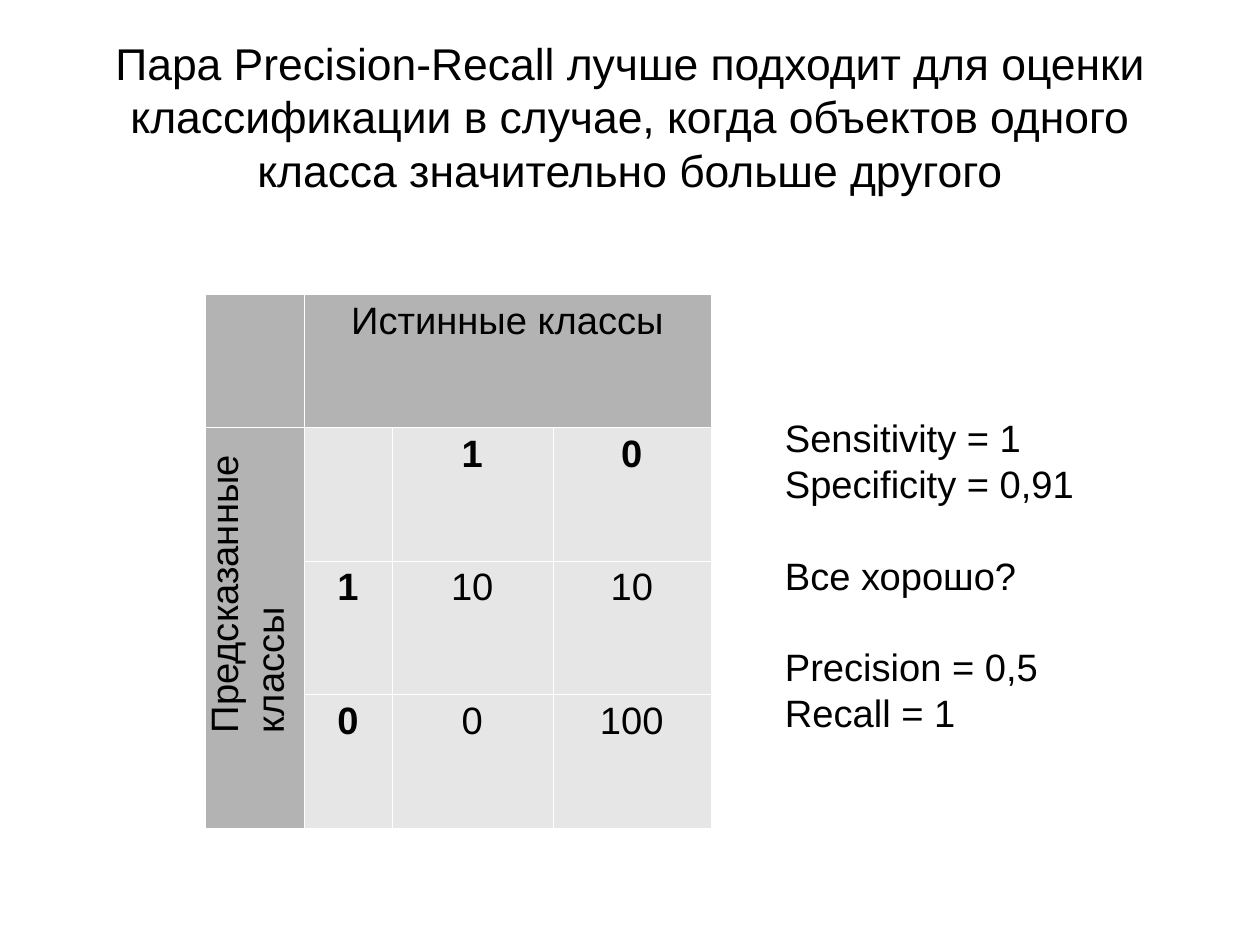
from lxml.etree import SubElement
from pptx import Presentation
from pptx.dml.color import RGBColor
from pptx.enum.text import MSO_ANCHOR, PP_ALIGN
from pptx.oxml.ns import qn
from pptx.util import Pt

INK, WHITE, DARK, LIGHT = "000000", "FFFFFF", "B3B3B3", "E6E6E6"


def color(code):
    return RGBColor.from_string(code)


def write(frame, lines, size=24, bold=False, align=PP_ALIGN.LEFT, gaps=()):
    for i, line in enumerate(lines):
        par = frame.paragraphs[0] if i == 0 else frame.add_paragraph()
        par.alignment = align
        if i in gaps:
            par.space_before = Pt(28.8)
        run = par.add_run()
        run.text = line
        run.font.name = "Arial"
        run.font.size = Pt(size)
        run.font.bold = bold
        run.font.color.rgb = color(INK)


def add_box(slide, box, lines, inset=True, anchor=MSO_ANCHOR.TOP, turn=0, **style):
    shape = slide.shapes.add_textbox(*map(Pt, box))
    shape.rotation = turn
    frame = shape.text_frame
    frame.word_wrap = True
    frame.vertical_anchor = anchor
    frame.margin_left = frame.margin_right = Pt(7.2 if inset else 0)
    frame.margin_top = frame.margin_bottom = Pt(3.6 if inset else 0)
    write(frame, lines, **style)


def add_title(slide, box):
    text = ("Пара Precision-Recall лучше подходит для оценки классификации "
            "в случае, когда объектов одного класса значительно больше другого")
    add_box(slide, box, [text], inset=False, anchor=MSO_ANCHOR.MIDDLE,
            size=28, align=PP_ALIGN.CENTER)


def edge(cell):
    props = cell._tc.get_or_add_tcPr()
    for side in ("lnL", "lnR", "lnT", "lnB"):
        line = SubElement(props, qn(f"a:{side}"), w=str(Pt(0.06)))
        fill = SubElement(line, qn("a:solidFill"))
        SubElement(fill, qn("a:srgbClr"), val=WHITE)


def add_matrix(slide, box):
    left, top, width, height = box
    rows = [["", "Истинные классы", "", ""],
            ["", "", "1", "0"],
            ["", "1", "10", "10"],
            ["", "0", "0", "100"]]
    grid = slide.shapes.add_table(4, 4, *map(Pt, box)).table
    grid.first_row = grid.horz_banding = False
    for col, span in zip(grid.columns, (62.6, 55.4, 101.3, 99.7)):
        col.width = Pt(span)
    for r, row in enumerate(rows):
        grid.rows[r].height = Pt(height / 4)
        for c, text in enumerate(row):
            cell = grid.cell(r, c)
            edge(cell)
            cell.fill.solid()
            cell.fill.fore_color.rgb = color(DARK if r == 0 or c == 0 else LIGHT)
            if text:
                write(cell.text_frame, [text], align=PP_ALIGN.CENTER,
                      bold=r > 0 and (r == 1 or c == 1))
    grid.cell(0, 1).merge(grid.cell(0, 3))
    grid.cell(1, 0).merge(grid.cell(3, 0))
    label = (left - 112.3, top + 117.4, 272.2, 60.5)
    add_box(slide, label, ["Предсказанные классы"], turn=270)


def add_scores(slide, box):
    lines = ["Sensitivity = 1", "Specificity = 0,91", "Все хорошо?",
             "Precision = 0,5", "Recall = 1"]
    add_box(slide, box, lines, gaps=(2, 3))


def main():
    deck = Presentation()
    deck.slide_width, deck.slide_height = Pt(793.75), Pt(595.25)
    slide = deck.slides.add_slide(deck.slide_layouts[6])
    add_title(slide, (39.6, 10.8, 714.2, 124.6))
    add_matrix(slide, (128.9, 185.1, 319, 336.2))
    add_scores(slide, (487.4, 257.8, 198.7, 295.2))
    deck.save("out.pptx")


if __name__ == "__main__":
    main()
